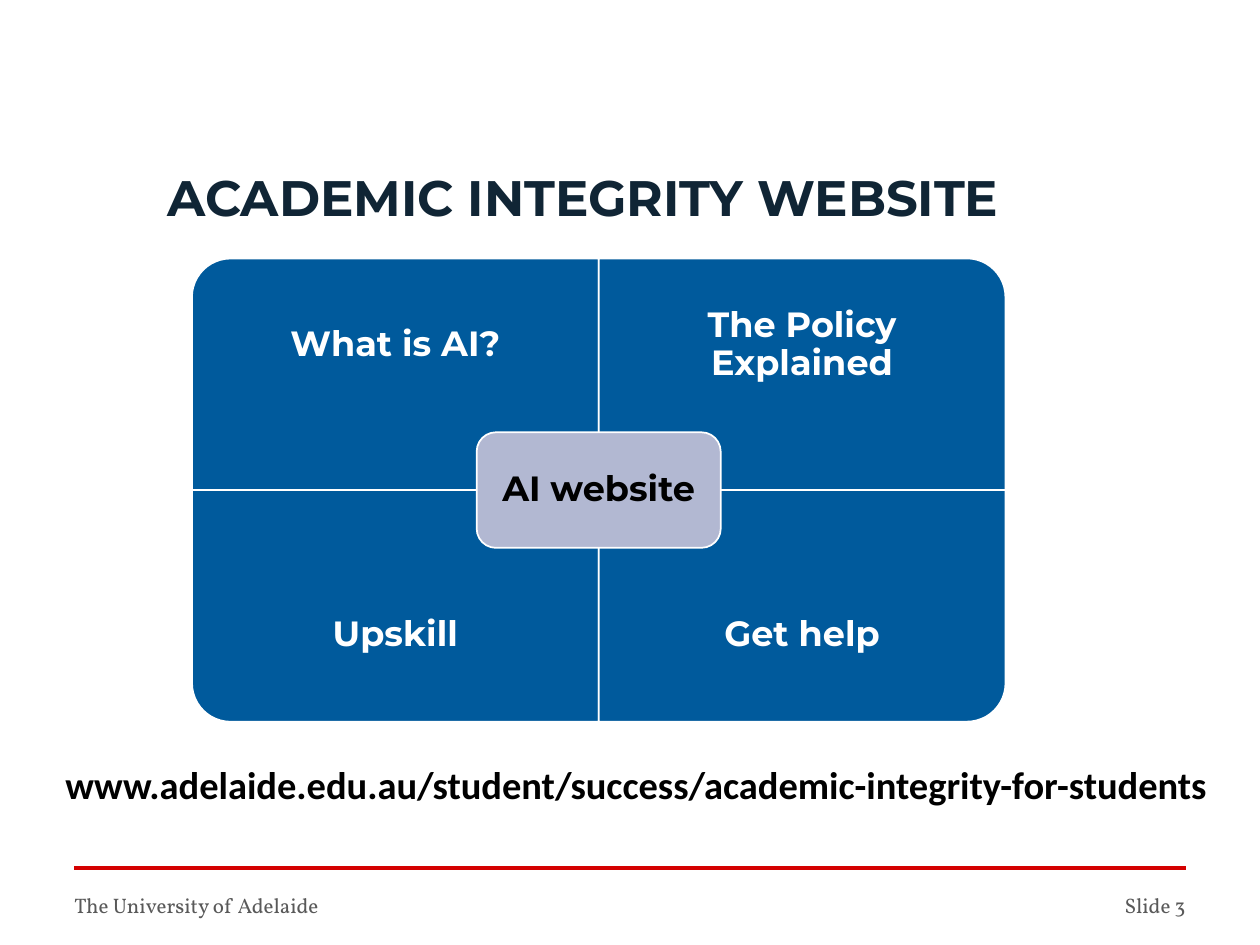
"""Build the academic integrity website slide."""
import pptx
import pptx.dml.color
import pptx.enum.shapes
import pptx.enum.text
import pptx.util
from lxml import etree

Cm = pptx.util.Cm
Pt = pptx.util.Pt
ALIGN = pptx.enum.text.PP_ALIGN
ANCHOR = pptx.enum.text.MSO_ANCHOR
SHAPE = pptx.enum.shapes.MSO_SHAPE

TITLE = "ACADEMIC INTEGRITY WEBSITE"
TOPICS = [["What is AI?", "The Policy Explained"], ["Upskill", "Get help"]]
ROTATIONS = [[270, 0], [180, 90]]
HUB = "AI website"
ADDRESS = "www.adelaide.edu.au/student/success/academic-integrity-for-students"
FOOTERS = [
    ("The University of Adelaide", 1.5, 10, ALIGN.LEFT),
    ("Slide 3", 18.9, 5, ALIGN.RIGHT),
]

GRID_LEFT, GRID_TOP = 3.87, 5.21
TILE_WIDTH, TILE_HEIGHT = 8.2, 4.67
LABEL_HEIGHT = 3.5
HUB_WIDTH, HUB_HEIGHT = 4.92, 2.33


def color(value):
    return pptx.dml.color.RGBColor.from_string(value)


def add_text(slide, text, left, top, width, height, size, font, ink, bold=False,
             align=ALIGN.LEFT, anchor=ANCHOR.TOP, inset=(0, 0), spacing=1.0):
    box = slide.shapes.add_textbox(Cm(left), Cm(top), Cm(width), Cm(height))
    frame = box.text_frame
    frame.word_wrap = True
    frame.vertical_anchor = anchor
    frame.margin_left = frame.margin_right = Cm(inset[0])
    frame.margin_top = frame.margin_bottom = Cm(inset[1])
    paragraph = frame.paragraphs[0]
    paragraph.text = text
    paragraph.alignment = align
    paragraph.line_spacing = spacing
    paragraph.font.size = Pt(size)
    paragraph.font.name = font
    paragraph.font.bold = bold
    paragraph.font.color.rgb = color(ink)


def add_label(slide, text, left, top, width, height, ink, inset):
    add_text(slide, text, left, top, width, height, 20, "Montserrat", ink, True,
             ALIGN.CENTER, ANCHOR.MIDDLE, (inset, inset), 0.9)


def add_panel(slide, kind, center_x, center_y, width, height, fill, rotation=0):
    if rotation % 180:
        width, height = height, width
    shape = slide.shapes.add_shape(kind, Cm(center_x - width / 2), Cm(center_y - height / 2),
                                   Cm(width), Cm(height))
    shape.rotation = rotation
    shape.shadow.inherit = False
    shape.fill.solid()
    shape.fill.fore_color.rgb = color(fill)
    shape.line.color.rgb = color("FFFFFF")
    shape.line.width = Pt(1)


def add_rule(slide, left, right, y):
    rule = slide.shapes.add_connector(pptx.enum.shapes.MSO_CONNECTOR.STRAIGHT,
                                      Cm(left), Cm(y), Cm(right), Cm(y))
    rule.line.color.rgb = color("D40000")
    rule.line.width = Pt(2.5)
    etree.SubElement(rule.element.spPr, pptx.oxml.ns.qn("a:effectLst"))


def add_matrix(slide):
    for row, topics in enumerate(TOPICS):
        for column, topic in enumerate(topics):
            left = GRID_LEFT + column * TILE_WIDTH
            top = GRID_TOP + row * TILE_HEIGHT
            add_panel(slide, SHAPE.ROUND_1_RECTANGLE, left + TILE_WIDTH / 2,
                      top + TILE_HEIGHT / 2, TILE_WIDTH, TILE_HEIGHT, "005A9C",
                      ROTATIONS[row][column])
            label_top = top + row * (TILE_HEIGHT - LABEL_HEIGHT)
            add_label(slide, topic, left, label_top, TILE_WIDTH, LABEL_HEIGHT, "FFFFFF", 0.4)
    center_x, center_y = GRID_LEFT + TILE_WIDTH, GRID_TOP + TILE_HEIGHT
    add_panel(slide, SHAPE.ROUNDED_RECTANGLE, center_x, center_y, HUB_WIDTH, HUB_HEIGHT, "B2B8D2")
    add_label(slide, HUB, center_x - HUB_WIDTH / 2, center_y - HUB_HEIGHT / 2,
              HUB_WIDTH, HUB_HEIGHT, "000000", 0.3)


def main():
    presentation = pptx.Presentation()
    presentation.slide_width, presentation.slide_height = Cm(25.4), Cm(19.05)
    slide = presentation.slides.add_slide(presentation.slide_layouts[6])
    add_rule(slide, 1.5, 23.9, 17.5)
    add_text(slide, TITLE, 3.38, 3.5, 22, 1.25, 28.5, "Montserrat", "102535", True, spacing=0.9)
    for text, left, width, align in FOOTERS:
        add_text(slide, text, left, 18, width, 0.5, 12, "Vollkorn", "595959", align=align)
    add_matrix(slide)
    add_text(slide, ADDRESS, 1.07, 15.21, 23.93, 1.2, 22, "Calibri", "000000", True,
             inset=(0.25, 0.13))
    presentation.save("out.pptx")


if __name__ == "__main__":
    main()
